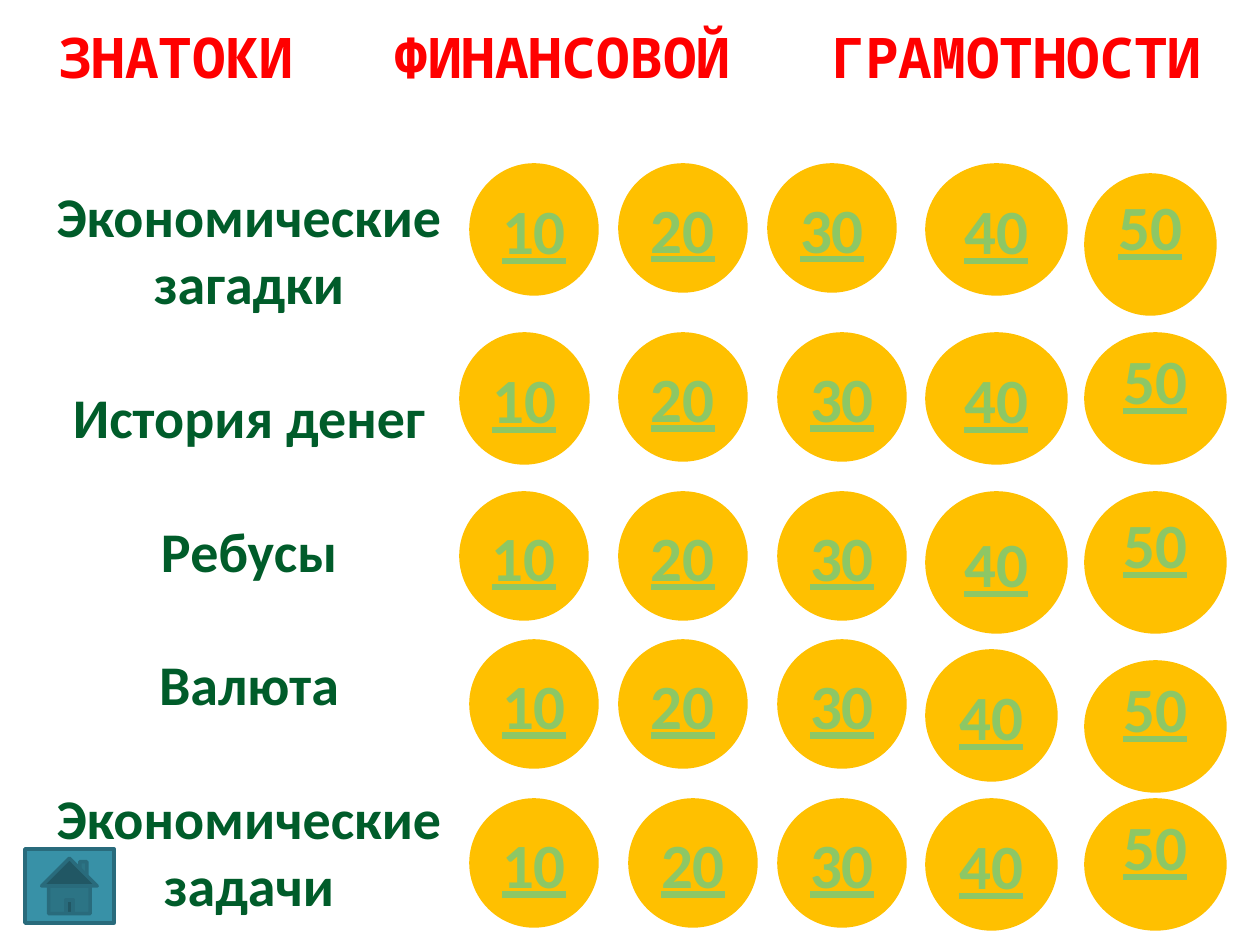
"""Build the quiz board slide with five topics and five point values each."""
import pptx
import pptx.util
import pptx.dml.color
import pptx.enum.shapes
import pptx.enum.text

SCALE = 914400 / 126
SHAPE = pptx.enum.shapes.MSO_SHAPE
CENTER = pptx.enum.text.PP_ALIGN.CENTER


def px(*lengths):
    return [pptx.util.Emu(round(n * SCALE)) for n in lengths]


def color(value):
    return pptx.dml.color.RGBColor.from_string(value)


prs = pptx.Presentation()
prs.slide_width, prs.slide_height = px(1260, 945)
s = prs.slides.add_slide(prs.slide_layouts[1])

title, body = s.placeholders
title.left, title.top, title.width, title.height = px(0, 0, 1260, 96)
tf = title.text_frame
tf.auto_size = pptx.enum.text.MSO_AUTO_SIZE.NONE
tf.vertical_anchor = pptx.enum.text.MSO_ANCHOR.BOTTOM
p = tf.paragraphs[0]
p.alignment = CENTER
p.line_spacing = pptx.util.Pt(20)
p.font.name = "Noto Sans Mono"
p.font.size = pptx.util.Pt(32)
p.font.bold = True
p.font.color.rgb = color("FF0000")
for i, word in enumerate(["ЗНАТОКИ", "ФИНАНСОВОЙ", "ГРАМОТНОСТИ"]):
    if i:
        r = p.add_run()
        r.text = " "
        r._r.get_or_add_rPr().set("spc", "3840")
    p.add_run().text = word

body.left, body.top, body.width, body.height = px(15, 175, 462, 669)
tf = body.text_frame
tf.auto_size = pptx.enum.text.MSO_AUTO_SIZE.NONE
topics = ["Экономические загадки", "История денег", "Ребусы", "Валюта",
          "Экономические задачи"]
for i, topic in enumerate(topics):
    p = tf.add_paragraph() if i else tf.paragraphs[0]
    p.text = topic
    p.alignment = CENTER
    p.space_before = pptx.util.Pt(38 if i else 0)
    p.font.name = "Calibri"
    p.font.size = pptx.util.Pt(32)
    p.font.bold = True
    p.font.color.rgb = color("005C2A")
    pPr = p._p.get_or_add_pPr()
    pPr.set("marL", "45720")
    pPr.set("indent", "0")
    pPr.insert_element_before(pptx.oxml.parse_xml(
        '<a:buNone xmlns:a="http://schemas.openxmlformats.org/drawingml/2006/main"/>'),
        "a:tabLst", "a:defRPr", "a:extLst")

board = [
    [(471, 165, 126, 129), (620, 165, 126, 126), (769, 165, 126, 126),
     (927, 165, 139, 129), (1086, 175, 129, 139)],
    [(461, 334, 127, 129), (620, 334, 126, 126), (779, 334, 126, 126),
     (927, 334, 139, 129), (1086, 334, 139, 129)],
    [(461, 493, 126, 126), (620, 493, 126, 126), (779, 493, 126, 126),
     (927, 493, 139, 139), (1086, 493, 139, 139)],
    [(471, 641, 126, 126), (620, 641, 126, 126), (779, 641, 126, 126),
     (927, 651, 129, 129), (1086, 662, 139, 129)],
    [(471, 800, 126, 126), (630, 800, 126, 126), (779, 800, 126, 126),
     (927, 800, 129, 129), (1086, 800, 139, 129)],
]
for row in board:
    for points, box in zip(range(10, 60, 10), row):
        sp = s.shapes.add_shape(SHAPE.OVAL, *px(*box))
        sp.shadow.inherit = False
        sp.fill.solid()
        sp.fill.fore_color.rgb = color("FFC000")
        sp.line.color.rgb = color("FFC000")
        sp.line.width = pptx.util.Pt(2)
        tf = sp.text_frame
        if points == 50:
            tf.margin_bottom, = px(44)
        p = tf.paragraphs[0]
        p.text = str(points)
        p.alignment = CENTER
        p.font.name = "Calibri"
        p.font.size = pptx.util.Pt(36)
        p.font.bold = True
        p.font.underline = True
        p.font.color.rgb = color("8DC765")

sp = s.shapes.add_shape(SHAPE.ACTION_BUTTON_HOME, *px(25, 849, 89, 74))
sp.shadow.inherit = False
sp.fill.solid()
sp.fill.fore_color.rgb = color("3891A7")
sp.line.color.rgb = color("296B7C")
sp.line.width = pptx.util.Pt(2)

prs.save("out.pptx")
